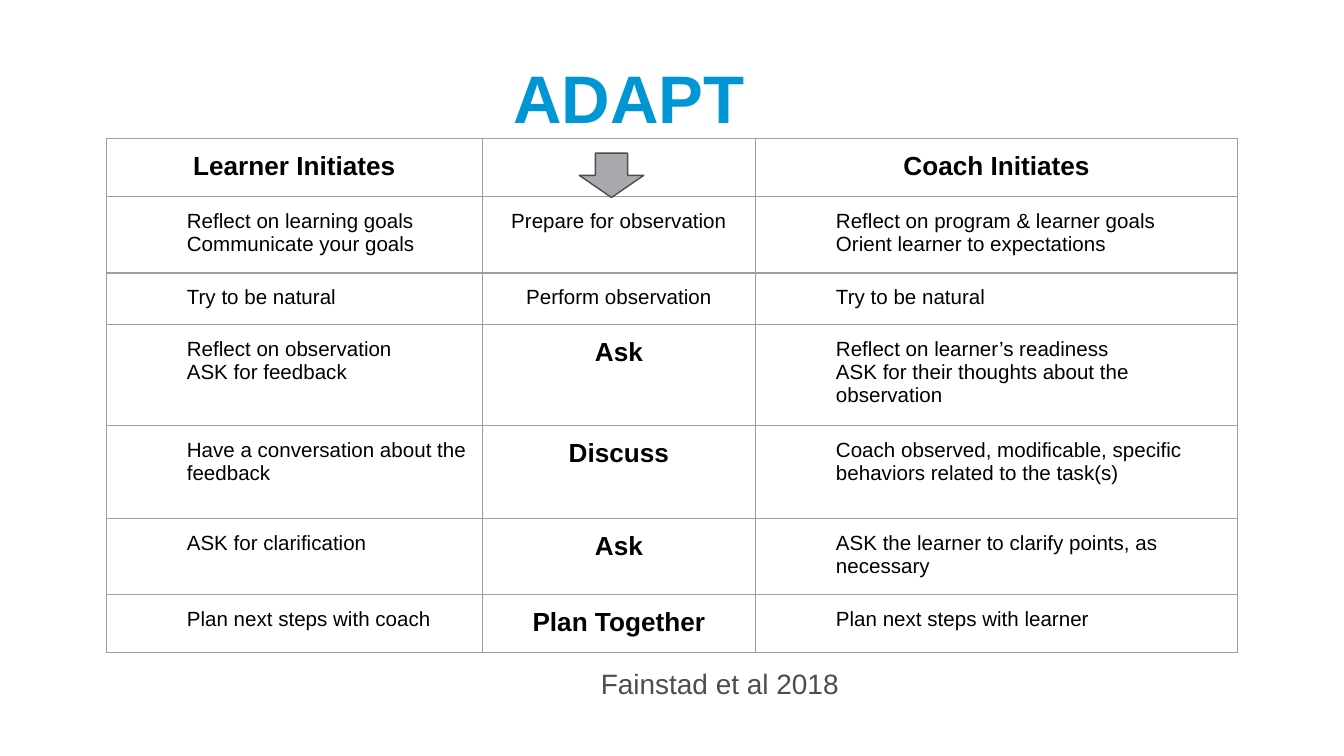
from lxml import etree
from pptx import Presentation
from pptx import util as u
from pptx.dml.color import RGBColor
from pptx.enum import shapes, text
from pptx.oxml.ns import qn

BLUE = RGBColor(0x00, 0x96, 0xD3)
BLACK = RGBColor(0x00, 0x00, 0x00)
DARK = RGBColor(0x4D, 0x4D, 0x4F)
GRAY = RGBColor(0xA7, 0xA9, 0xAC)
BORDER = RGBColor(0x9E, 0x9E, 0x9E)

CENTER = text.PP_ALIGN.CENTER
LEFT = text.PP_ALIGN.LEFT


def write(frame, words, size=11, bold=False, color=BLACK, align=LEFT, indent=0, spacing=None):
    for index, line in enumerate(words.split("\n")):
        para = frame.paragraphs[0] if index == 0 else frame.add_paragraph()
        para.alignment = align
        para.line_spacing = spacing
        if indent:
            properties = para._p.get_or_add_pPr()
            properties.set("marL", str(u.Inches(indent)))
            properties.set("indent", "0")
        if not line:
            etree.SubElement(para._p, qn("a:endParaRPr"), sz=str(size * 100))
            continue
        span = para.add_run()
        span.text = line
        span.font.name = "Arial"
        span.font.size = u.Pt(size)
        span.font.bold = bold
        span.font.color.rgb = color


def add_borders(cell):
    properties = cell._tc.get_or_add_tcPr()
    for side in ("a:lnL", "a:lnR", "a:lnT", "a:lnB"):
        line = etree.SubElement(properties, qn(side), w=str(u.Pt(0.75)))
        fill = etree.SubElement(line, qn("a:solidFill"))
        etree.SubElement(fill, qn("a:srgbClr"), val=str(BORDER))


deck = Presentation()
deck.slide_width = u.Inches(10)
deck.slide_height = u.Inches(10 * 9 / 16)
page = deck.slides.add_slide(deck.slide_layouts[6])

title = page.shapes.add_textbox(u.Inches(0.69), u.Inches(0.21), u.Inches(7.98), u.Inches(1.09))
title.text_frame.word_wrap = True
title.text_frame.vertical_anchor = text.MSO_ANCHOR.MIDDLE
write(title.text_frame, "ADAPT", size=36, bold=True, color=BLUE, align=CENTER, spacing=0.9)

citation = page.shapes.add_textbox(u.Inches(2.92), u.Inches(4.94), u.Inches(3.42), u.Inches(0.5))
citation.text_frame.word_wrap = True
write(citation.text_frame, "Fainstad et al 2018", size=15, color=DARK,
      align=text.PP_ALIGN.RIGHT, spacing=0.9)

widths = [2.8, 2.03, 3.59]
heights = [0.4, 0.52, 0.35, 0.69, 0.69, 0.52, 0.35]
steps = [
    ("Learner Initiates", "", "Coach Initiates"),
    ("Reflect on learning goals\nCommunicate your goals", "Prepare for observation",
     "Reflect on program & learner goals\nOrient learner to expectations"),
    ("Try to be natural", "Perform observation", "Try to be natural"),
    ("Reflect on observation\nASK for feedback", "Ask",
     "Reflect on learner’s readiness\nASK for their thoughts about the observation"),
    ("Have a conversation about the feedback", "Discuss",
     "Coach observed, modificable, specific behaviors related to the task(s)"),
    ("ASK for clarification", "Ask", "ASK the learner to clarify points, as necessary"),
    ("Plan next steps with coach", "Plan Together", "Plan next steps with learner"),
]

holder = page.shapes.add_table(len(steps), len(widths), u.Inches(0.79), u.Inches(1.03),
                               u.Inches(3.28), u.Inches(3.28))
table = holder.table
table.first_row = False
table.horz_banding = False
for column, width in zip(table.columns, widths):
    column.width = u.Inches(width)
for row, height in zip(table.rows, heights):
    row.height = u.Inches(height)
holder.width = holder.height = u.Inches(3.28)

for row, step in enumerate(steps):
    for column, words in enumerate(step):
        cell = table.cell(row, column)
        cell.margin_left = cell.margin_right = u.Inches(0.1)
        cell.margin_top = cell.margin_bottom = u.Inches(0.1)
        add_borders(cell)
        cell.fill.background()
        centered = row == 0 or column == 1
        strong = row == 0 or (column == 1 and row > 2)
        write(cell.text_frame, words, size=14 if strong else 11, bold=strong,
              align=CENTER if centered else LEFT, indent=0 if centered else 0.5)

arrow = page.shapes.add_shape(shapes.MSO_SHAPE.DOWN_ARROW, u.Inches(4.31), u.Inches(1.14),
                              u.Inches(0.48), u.Inches(0.33))
arrow.shadow.inherit = False
arrow.fill.solid()
arrow.fill.fore_color.rgb = GRAY
arrow.line.color.rgb = DARK
arrow.line.width = u.Pt(0.75)

deck.save("out.pptx")
